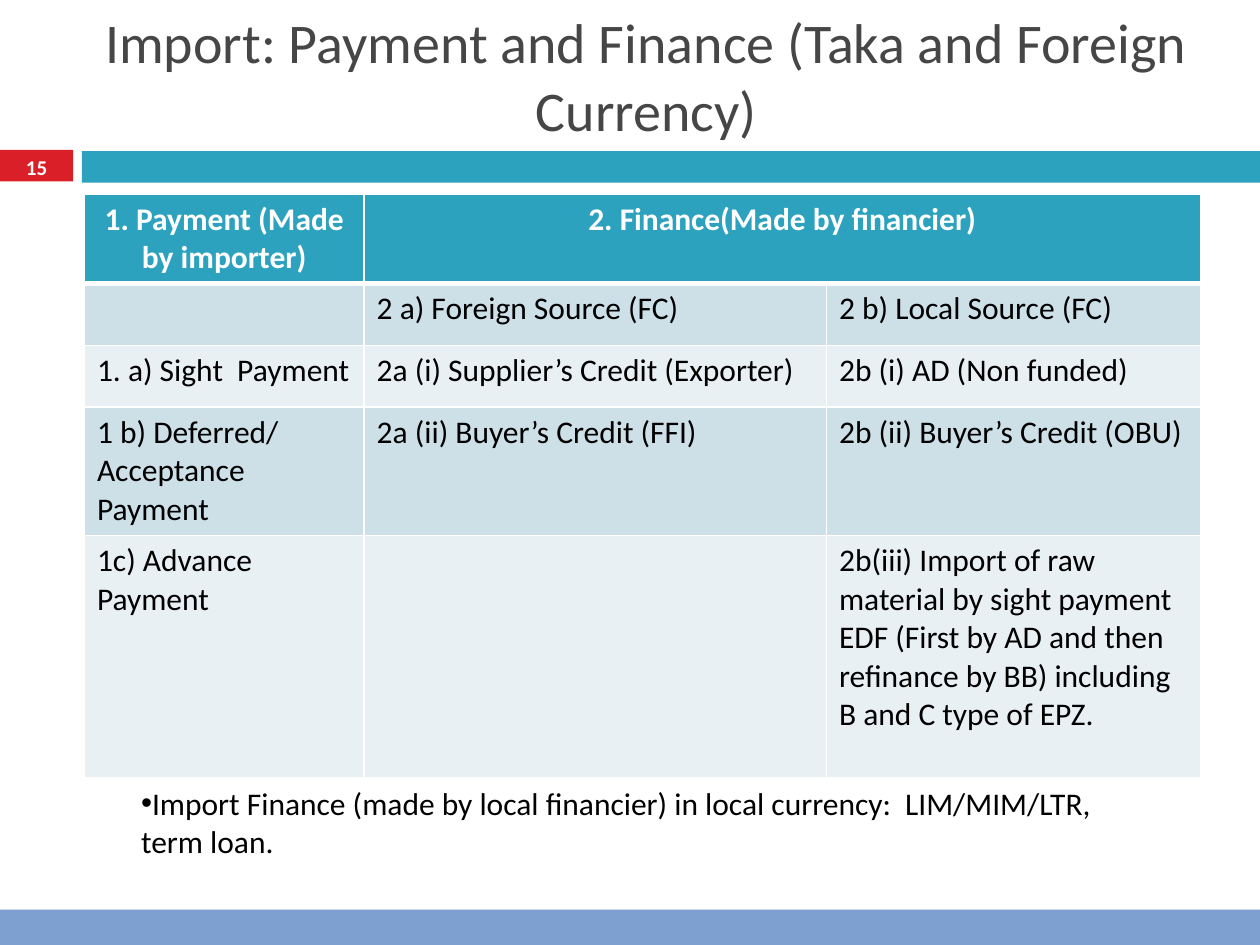
from typing import NamedTuple

from lxml import etree
from pptx import Presentation
from pptx.dml.color import RGBColor
from pptx.enum.shapes import MSO_SHAPE
from pptx.enum.text import MSO_ANCHOR, MSO_AUTO_SIZE, PP_ALIGN
from pptx.oxml.ns import qn
from pptx.util import Inches, Pt

RECTANGLE = MSO_SHAPE.RECTANGLE
CENTER, LEFT = PP_ALIGN.CENTER, PP_ALIGN.LEFT
TOP, MIDDLE, BOTTOM = MSO_ANCHOR.TOP, MSO_ANCHOR.MIDDLE, MSO_ANCHOR.BOTTOM
NO_AUTOFIT = MSO_AUTO_SIZE.NONE

FONT = "Calibri"
WHITE = RGBColor(0xFF, 0xFF, 0xFF)
BLACK = RGBColor(0x00, 0x00, 0x00)
GRAY = RGBColor(0x46, 0x46, 0x46)
RED = RGBColor(0xDA, 0x1F, 0x28)
TEAL = RGBColor(0x2D, 0xA2, 0xBF)
BLUE = RGBColor(0x7D, 0xA0, 0xD0)
BAND_DARK = RGBColor(0xCD, 0xE0, 0xE8)
BAND_LIGHT = RGBColor(0xE8, 0xF0, 0xF4)


class Box(NamedTuple):
    left: float
    top: float
    width: float
    height: float


class Bar(NamedTuple):
    box: Box
    color: RGBColor


class TextStyle(NamedTuple):
    size: float
    color: RGBColor
    bold: bool = False
    alignment: PP_ALIGN = LEFT


BARS = [
    Bar(Box(0, 1.19, 0.58, 0.25), RED),
    Bar(Box(0.65, 1.2, 9.35, 0.25), TEAL),
    Bar(Box(0, 7.22, 10, 0.28), BLUE),
]
TITLE_STYLE = TextStyle(32, GRAY, alignment=CENTER)
NUMBER_STYLE = TextStyle(12, WHITE, True, CENTER)
HEADER_STYLE = TextStyle(18, WHITE, True, CENTER)
BODY_STYLE = TextStyle(18, BLACK)

COLUMN_WIDTHS = [2.22, 3.67, 2.97]
ROW_HEIGHTS = [0.71, 0.49, 0.49, 1.02, 1.92]
ROWS = [
    ["1. Payment (Made by importer)", "2. Finance(Made by financier)", ""],
    ["", "2 a) Foreign Source (FC)", "2 b) Local Source (FC)"],
    ["1. a) Sight  Payment", "2a (i) Supplier’s Credit (Exporter)", "2b (i) AD (Non funded)"],
    ["1 b) Deferred/ Acceptance\nPayment", "2a (ii) Buyer’s Credit (FFI)",
     "2b (ii) Buyer’s Credit (OBU)"],
    ["1c) Advance Payment", "",
     "2b(iii) Import of raw material by sight payment EDF (First by AD and then "
     "refinance by BB) including B and C type of EPZ."],
]


def lengths(box: Box) -> list:
    return [Inches(value) for value in box]


def place(shape, box: Box) -> None:
    shape.left, shape.top, shape.width, shape.height = lengths(box)


def write_text(text_frame, text: str, style: TextStyle) -> None:
    for index, line in enumerate(text.split("\n")):
        paragraph = text_frame.add_paragraph() if index else text_frame.paragraphs[0]
        paragraph.alignment = style.alignment
        paragraph.space_before = Pt(0)
        run = paragraph.add_run()
        run.text = line
        run.font.name = FONT
        run.font.size = Pt(style.size)
        run.font.bold = style.bold
        run.font.color.rgb = style.color


def fill_frame(shape, text: str, style: TextStyle, anchor: MSO_ANCHOR) -> None:
    text_frame = shape.text_frame
    text_frame.word_wrap = True
    text_frame.auto_size = NO_AUTOFIT
    text_frame.vertical_anchor = anchor
    write_text(text_frame, text, style)


def draw_bar(slide, bar: Bar) -> None:
    shape = slide.shapes.add_shape(RECTANGLE, *lengths(bar.box))
    shape.shadow.inherit = False
    shape.fill.solid()
    shape.fill.fore_color.rgb = bar.color
    shape.line.fill.background()


def set_borders(cell, bottom_width: float) -> None:
    properties = cell._tc.get_or_add_tcPr()
    for side, width in (("L", 1), ("R", 1), ("T", 1), ("B", bottom_width)):
        line = etree.SubElement(properties, qn(f"a:ln{side}"), w=str(Pt(width)))
        solid_fill = etree.SubElement(line, qn("a:solidFill"))
        etree.SubElement(solid_fill, qn("a:srgbClr"), val=str(WHITE))


def draw_table(slide, left: float, top: float) -> None:
    box = Box(left, top, sum(COLUMN_WIDTHS), sum(ROW_HEIGHTS))
    table = slide.shapes.add_table(len(ROWS), len(COLUMN_WIDTHS), *lengths(box)).table
    for column, width in zip(table.columns, COLUMN_WIDTHS):
        column.width = Inches(width)
    table.cell(0, 1).merge(table.cell(0, 2))
    for row_index, texts in enumerate(ROWS):
        is_header = row_index == 0
        table.rows[row_index].height = Inches(ROW_HEIGHTS[row_index])
        band = BAND_DARK if row_index % 2 else BAND_LIGHT
        for column_index, text in enumerate(texts):
            cell = table.cell(row_index, column_index)
            set_borders(cell, 3 if is_header else 1)
            cell.fill.solid()
            cell.fill.fore_color.rgb = TEAL if is_header else band
            if text:
                write_text(cell.text_frame, text, HEADER_STYLE if is_header else BODY_STYLE)


def add_bullet(paragraph) -> None:
    properties = paragraph._p.get_or_add_pPr()
    properties.set("marL", "0")
    properties.set("indent", "0")
    etree.SubElement(properties, qn("a:buFont"), typeface="Arial")
    etree.SubElement(properties, qn("a:buChar"), char="•")


def main() -> None:
    presentation = Presentation()
    presentation.slide_width = Inches(10)
    presentation.slide_height = Inches(7.5)
    slide = presentation.slides.add_slide(presentation.slide_layouts[1])

    for bar in BARS:
        draw_bar(slide, bar)

    title = slide.shapes.title
    place(title, Box(0.67, 0.06, 8.92, 1.12))
    fill_frame(title, "Import: Payment and Finance (Taka and Foreign Currency)", TITLE_STYLE, BOTTOM)

    draw_table(slide, 0.67, 1.54)

    number = slide.shapes.add_textbox(*lengths(Box(0, 1.19, 0.58, 0.27)))
    fill_frame(number, "15", NUMBER_STYLE, MIDDLE)

    body = slide.placeholders[1]
    place(body, Box(1.02, 6.17, 8.13, 0.71))
    fill_frame(
        body,
        "Import Finance (made by local financier) in local currency:  LIM/MIM/LTR, term loan.",
        BODY_STYLE,
        TOP,
    )
    add_bullet(body.text_frame.paragraphs[0])

    presentation.save("out.pptx")


if __name__ == "__main__":
    main()
